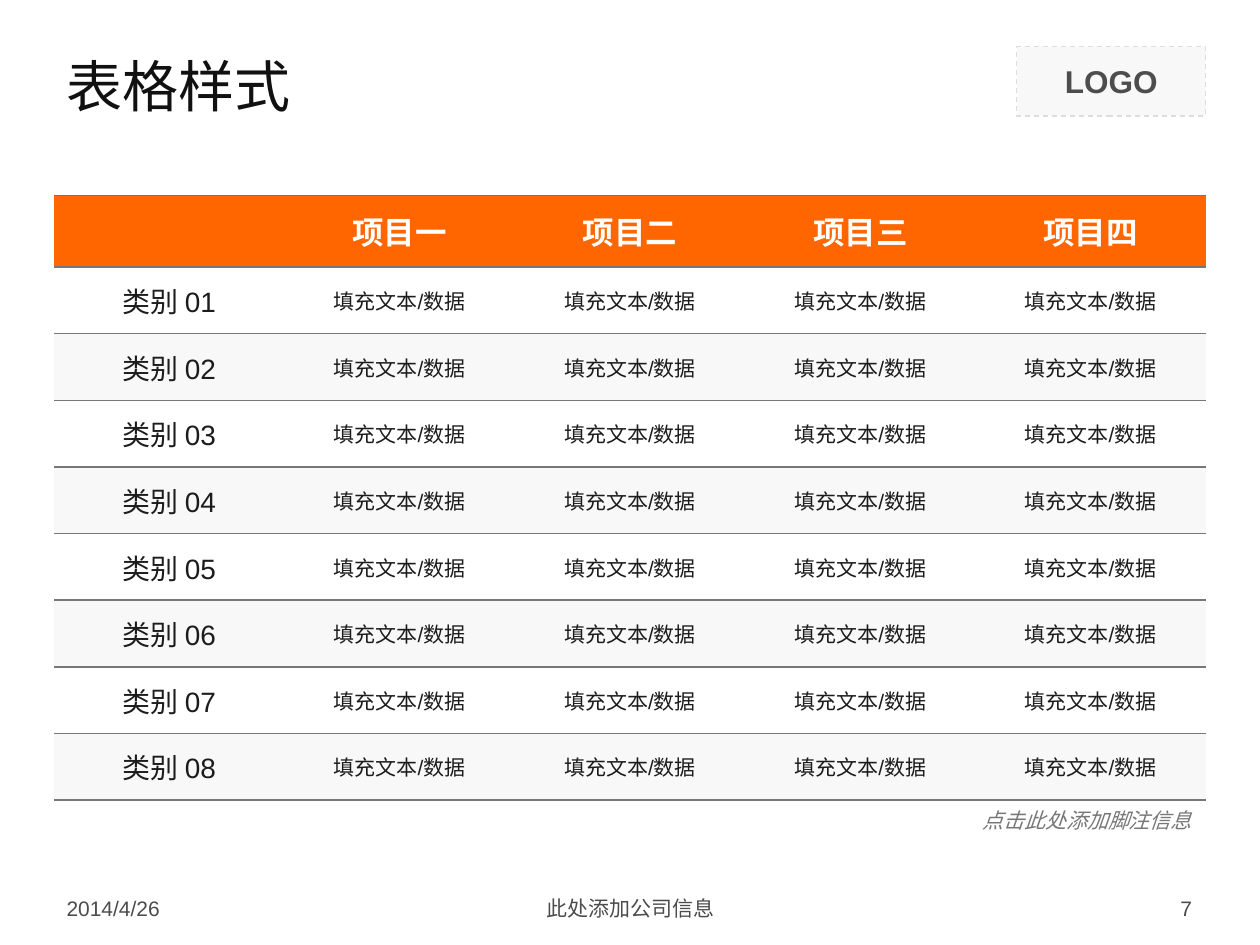
"""Build a slide with a banded table, a logo box and a footer."""
import lxml.etree
import pptx
import pptx.dml.color
import pptx.enum.dml
import pptx.enum.shapes
import pptx.enum.text
import pptx.oxml.ns
import pptx.util

Inches = pptx.util.Inches
Pt = pptx.util.Pt
RGBColor = pptx.dml.color.RGBColor
Align = pptx.enum.text.PP_ALIGN
Anchor = pptx.enum.text.MSO_ANCHOR
AutoSize = pptx.enum.text.MSO_AUTO_SIZE

ORANGE = RGBColor(0xFF, 0x66, 0x00)
WHITE = RGBColor(0xFF, 0xFF, 0xFF)
PALE = RGBColor(0xF8, 0xF8, 0xF8)
DASH_GREY = RGBColor(0xDD, 0xDD, 0xDD)
RULE_GREY = RGBColor(0x77, 0x77, 0x77)
LOGO_GREY = RGBColor(0x4D, 0x4D, 0x4D)
FOOTER_GREY = RGBColor(0x4C, 0x4C, 0x4C)
TITLE_INK = RGBColor(0x11, 0x11, 0x11)
BODY_INK = RGBColor(0x1C, 0x1C, 0x1C)

LEFT, WIDTH = 0.43, 9.14
HEADERS = ["", "项目一", "项目二", "项目三", "项目四"]
CATEGORIES = [f"类别 {number:02d}" for number in range(1, 9)]
ROWS = [HEADERS] + [[name] + ["填充文本/数据"] * 4 for name in CATEGORIES]


class SlideBuilder:
    """Hold the style and the slide, and add each kind of element."""

    def __init__(self, slide):
        self.slide = slide
        self.base = {"name": "Arial", "size": Pt(12), "bold": False, "italic": False}

    def add_text(self, frame, text, color, align=Align.LEFT, **changes):
        para = frame.paragraphs[0]
        para.alignment = align
        span = para.add_run()
        span.text = text
        for key, value in (self.base | changes).items():
            setattr(span.font, key, value)
        span.font.color.rgb = color

    def place(self, shape, area):
        for key, value in zip(("left", "top", "width", "height"), area):
            setattr(shape, key, Inches(value))

    def title(self, text, area):
        box = self.slide.shapes.title
        self.place(box, area)
        box.text_frame.vertical_anchor = Anchor.MIDDLE
        box.text_frame.auto_size = AutoSize.NONE
        self.add_text(box.text_frame, text, TITLE_INK, name="Montserrat", size=Pt(32))

    def logo(self, text, area):
        box = self.slide.shapes.add_shape(
            pptx.enum.shapes.MSO_SHAPE.RECTANGLE, *map(Inches, area))
        box.shadow.inherit = False
        box.fill.solid()
        box.fill.fore_color.rgb = PALE
        box.line.color.rgb = DASH_GREY
        box.line.width = Pt(0.75)
        box.line.dash_style = pptx.enum.dml.MSO_LINE.DASH
        box.text_frame.vertical_anchor = Anchor.MIDDLE
        self.add_text(box.text_frame, text, LOGO_GREY, Align.CENTER,
                      size=Pt(18), bold=True)

    def label(self, text, area, align, color=FOOTER_GREY, anchor=Anchor.MIDDLE,
              wrap=True, fit=AutoSize.NONE, **changes):
        box = self.slide.shapes.add_textbox(*map(Inches, area))
        frame = box.text_frame
        frame.word_wrap = wrap
        frame.auto_size = fit
        frame.vertical_anchor = anchor
        self.add_text(frame, text, color, align, **changes)

    def rule(self, cell):
        properties = cell._tc.get_or_add_tcPr()
        qn = pptx.oxml.ns.qn
        for index, (side, visible) in enumerate(
                (("lnL", False), ("lnR", False), ("lnT", True), ("lnB", True))):
            line = lxml.etree.Element(qn(f"a:{side}"), w=str(Pt(1)))
            properties.insert(index, line)
            if visible:
                fill = lxml.etree.SubElement(line, qn("a:solidFill"))
                lxml.etree.SubElement(fill, qn("a:srgbClr"), val=str(RULE_GREY))
            else:
                lxml.etree.SubElement(line, qn("a:noFill"))

    def table(self, rows, area, header_height):
        columns = len(rows[0])
        grid = self.slide.shapes.add_table(
            len(rows), columns, *map(Inches, area)).table
        body_height = (area[3] - header_height) / (len(rows) - 1)
        for column in grid.columns:
            column.width = Inches(area[2] / columns)
        for r, texts in enumerate(rows):
            grid.rows[r].height = Inches(body_height if r else header_height)
            for c, text in enumerate(texts):
                cell = grid.cell(r, c)
                cell.vertical_anchor = Anchor.MIDDLE
                cell.fill.solid()
                cell.fill.fore_color.rgb = (WHITE if r % 2 else PALE) if r else ORANGE
                self.rule(cell)
                if text:
                    size = (12 if c else 16) if r else 18
                    self.add_text(cell.text_frame, text, BODY_INK if r else WHITE,
                                  Align.CENTER, size=Pt(size), bold=r == 0)


def main():
    deck = pptx.Presentation()
    deck.slide_width, deck.slide_height = Inches(10), Inches(7.5)
    page = SlideBuilder(deck.slides.add_slide(deck.slide_layouts[5]))
    page.logo("LOGO", (8.07, 0.37, 1.5, 0.55))
    page.title("表格样式", (LEFT, 0.28, WIDTH, 0.79))
    page.table(ROWS, (LEFT, 1.55, WIDTH, 4.8), 0.57)
    for text, left, width, align in (
            ("2014/4/26", LEFT, 2.33, Align.LEFT),
            ("此处添加公司信息", 3.42, 3.17, Align.CENTER),
            ("7", 7.23, 2.33, Align.RIGHT)):
        page.label(text, (left, 7.06, width, 0.29), align)
    page.label("点击此处添加脚注信息", (7.68, 6.36, 1.88, 0.3), Align.RIGHT,
               RULE_GREY, Anchor.TOP, wrap=False,
               fit=AutoSize.SHAPE_TO_FIT_TEXT, italic=True)
    deck.save("out.pptx")


if __name__ == "__main__":
    main()
